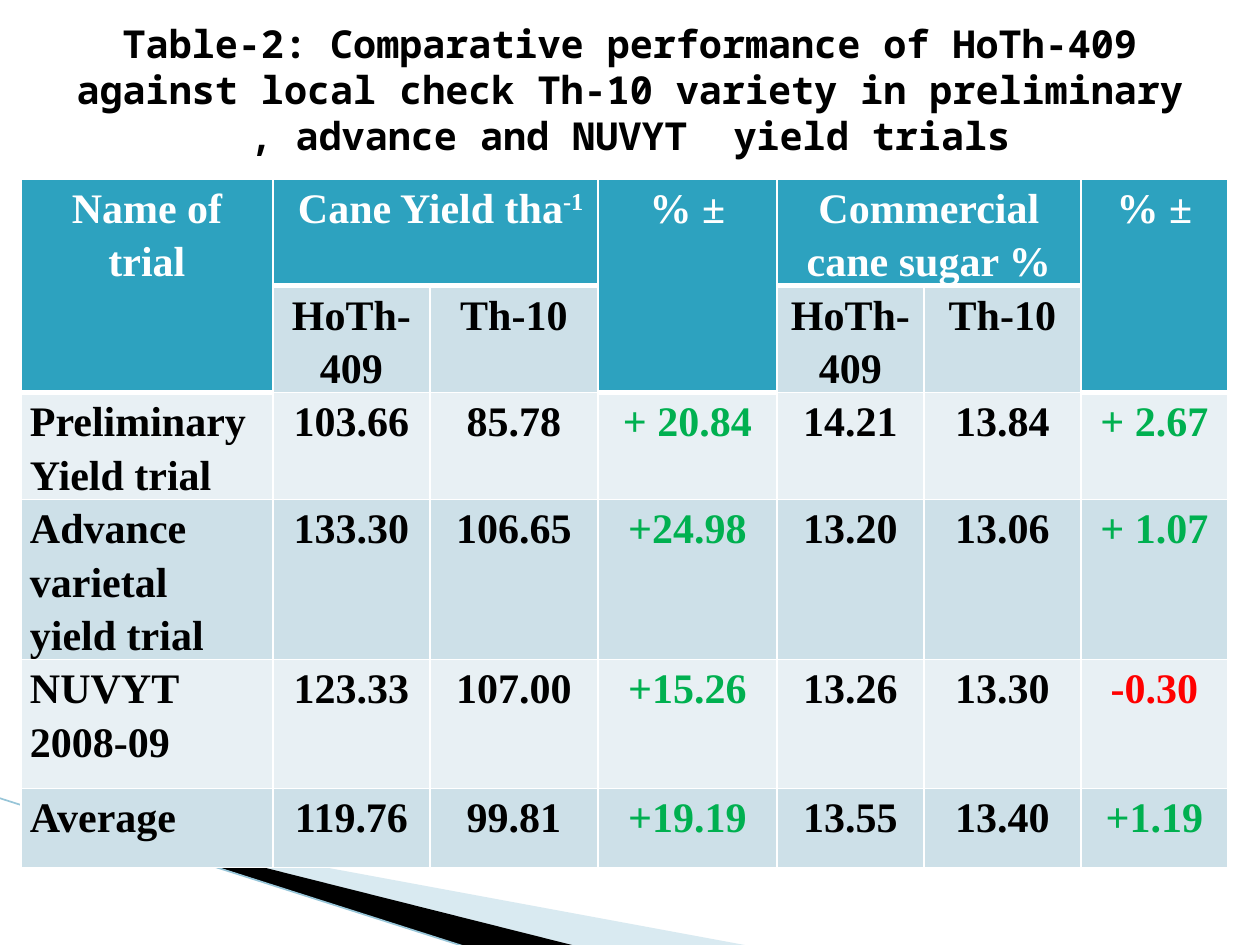
from lxml import etree
from pptx import Presentation
from pptx.dml.color import RGBColor
from pptx.enum.shapes import MSO_CONNECTOR
from pptx.enum.text import MSO_ANCHOR, MSO_AUTO_SIZE, PP_ALIGN
from pptx.oxml.ns import qn
from pptx.util import Emu, Pt

STRAIGHT = MSO_CONNECTOR.STRAIGHT
TOP = MSO_ANCHOR.TOP
NO_AUTOFIT = MSO_AUTO_SIZE.NONE
LEFT, CENTER = PP_ALIGN.LEFT, PP_ALIGN.CENTER

BLACK = RGBColor(0x00, 0x00, 0x00)
WHITE = RGBColor(0xFF, 0xFF, 0xFF)
TEAL = RGBColor(0x2D, 0xA2, 0xBF)
BAND_DARK = RGBColor(0xCD, 0xE0, 0xE8)
BAND_LIGHT = RGBColor(0xE8, 0xF0, 0xF4)
GAIN = RGBColor(0x00, 0xB0, 0x50)
LOSS = RGBColor(0xFF, 0x00, 0x00)
SWOOSH = RGBColor(0xA0, 0xCB, 0xDC)
SWOOSH_LINE = RGBColor(0x97, 0xC5, 0xD8)

SCALE = 914400 / 126
TITLE_FONT = {"name": "Noto Sans Mono", "size": Pt(22), "bold": True}
CELL_FONT = {"name": "Times New Roman", "size": Pt(24), "bold": True}
COLUMN_WIDTHS = [252, 157, 168, 179, 147, 157, 147]
ROW_HEIGHTS = [93, 93, 93, 93, 129, 79]
TALL_COLUMNS = (0, 3, 6)
CHANGE_COLUMNS = (3, 6)
MERGES = [((0, 0), (1, 0)), ((0, 1), (0, 2)), ((0, 3), (1, 3)),
          ((0, 4), (0, 5)), ((0, 6), (1, 6))]
ROWS = [
    ["Name of trial", " Cane Yield tha", "", "% ±", "Commercial cane sugar %", "", "% ±"],
    ["", "HoTh-409", "Th-10", "", "HoTh-409", "Th-10", ""],
    ["Preliminary Yield trial", "103.66", "85.78", "+ 20.84", "14.21", "13.84", "+ 2.67"],
    ["Advance varietal yield trial", "133.30", "106.65", "+24.98", "13.20", "13.06", "+ 1.07"],
    ["NUVYT 2008-09", "123.33", "107.00", "+15.26", "13.26", "13.30", "-0.30"],
    ["Average", "119.76", "99.81", "+19.19", "13.55", "13.40", "+1.19"],
]


def px(value):
    return Emu(round(value * SCALE))


def add_run(paragraph, text, font_values, color):
    run = paragraph.add_run()
    run.text = text
    for name, value in font_values.items():
        setattr(run.font, name, value)
    run.font.color.rgb = color
    return run


presentation = Presentation()
presentation.slide_width = px(1260)
presentation.slide_height = px(945)
slide = presentation.slides.add_slide(presentation.slide_layouts[5])

swooshes = [
    (SWOOSH, 40, [(69, 820), (750, 946), (575, 946), (69, 819)]),
    (BLACK, 100, [(67, 818), (576, 946), (469, 948), (68, 819)]),
]
for color, opacity, points in swooshes:
    builder = slide.shapes.build_freeform(*points[0], scale=SCALE)
    builder.add_line_segments(points[1:], close=True)
    shape = builder.convert_to_shape()
    shape.shadow.inherit = False
    shape.line.fill.background()
    shape.fill.solid()
    shape.fill.fore_color.rgb = color
    if opacity < 100:
        color_element = shape.element.spPr.find(qn("a:solidFill"))[0]
        etree.SubElement(color_element, qn("a:alpha"), val=str(opacity * 1000))

edge = slide.shapes.add_connector(STRAIGHT, px(-1), px(798), px(469), px(948))
edge.line.color.rgb = SWOOSH_LINE
edge.line.width = Pt(0.95)
etree.SubElement(edge.element.spPr, qn("a:effectLst"))

table = slide.shapes.add_table(
    len(ROWS), len(COLUMN_WIDTHS), px(21), px(179),
    px(sum(COLUMN_WIDTHS)), px(sum(ROW_HEIGHTS))).table
table.horz_banding = False
for column, width in zip(table.columns, COLUMN_WIDTHS):
    column.width = px(width)
for row, height in zip(table.rows, ROW_HEIGHTS):
    row.height = px(height)
for first, last in MERGES:
    table.cell(*first).merge(table.cell(*last))

for row_index, texts in enumerate(ROWS):
    for column_index, text in enumerate(texts):
        cell = table.cell(row_index, column_index)
        header_end = 1 if column_index in TALL_COLUMNS else 0
        is_header = row_index <= header_end
        cell.margin_left = cell.margin_right = px(9)
        cell.margin_top = cell.margin_bottom = 0

        border_widths = {
            "a:lnL": 1,
            "a:lnR": 1,
            "a:lnT": 3 if row_index == header_end + 1 else 1,
            "a:lnB": 3 if row_index == header_end else 1,
        }
        properties = cell._tc.get_or_add_tcPr()
        for tag, width in border_widths.items():
            border = etree.SubElement(properties, qn(tag), w=str(Pt(width)))
            border_fill = etree.SubElement(border, qn("a:solidFill"))
            etree.SubElement(border_fill, qn("a:srgbClr"), val=str(WHITE))

        cell.fill.solid()
        if is_header:
            cell.fill.fore_color.rgb = TEAL
        else:
            cell.fill.fore_color.rgb = BAND_DARK if row_index % 2 else BAND_LIGHT

        if not text:
            continue
        color = BLACK
        if is_header:
            color = WHITE
        elif column_index in CHANGE_COLUMNS:
            color = LOSS if text.startswith("-") else GAIN
        paragraph = cell.text_frame.paragraphs[0]
        paragraph.alignment = LEFT if column_index == 0 and not is_header else CENTER
        paragraph.line_spacing = 1.15
        add_run(paragraph, text, CELL_FONT, color)

unit_paragraph = table.cell(0, 1).text_frame.paragraphs[0]
exponent = add_run(unit_paragraph, "-1", CELL_FONT, WHITE)
exponent.font._element.set("baseline", "30000")

title = slide.shapes.title
title_box = {"left": 63, "top": 0, "width": 1134, "height": 347}
for name, value in title_box.items():
    setattr(title, name, px(value))
title_frame = title.text_frame
frame_values = {"word_wrap": True, "auto_size": NO_AUTOFIT, "vertical_anchor": TOP,
                "margin_left": px(10), "margin_right": px(10), "margin_top": px(20)}
for name, value in frame_values.items():
    setattr(title_frame, name, value)
title_paragraph = title_frame.paragraphs[0]
title_paragraph.alignment = CENTER
add_run(title_paragraph,
        "Table-2: Comparative performance of HoTh-409 against local check Th-10 "
        "variety in preliminary , advance and NUVYT  yield trials",
        TITLE_FONT, BLACK)

presentation.save("out.pptx")
